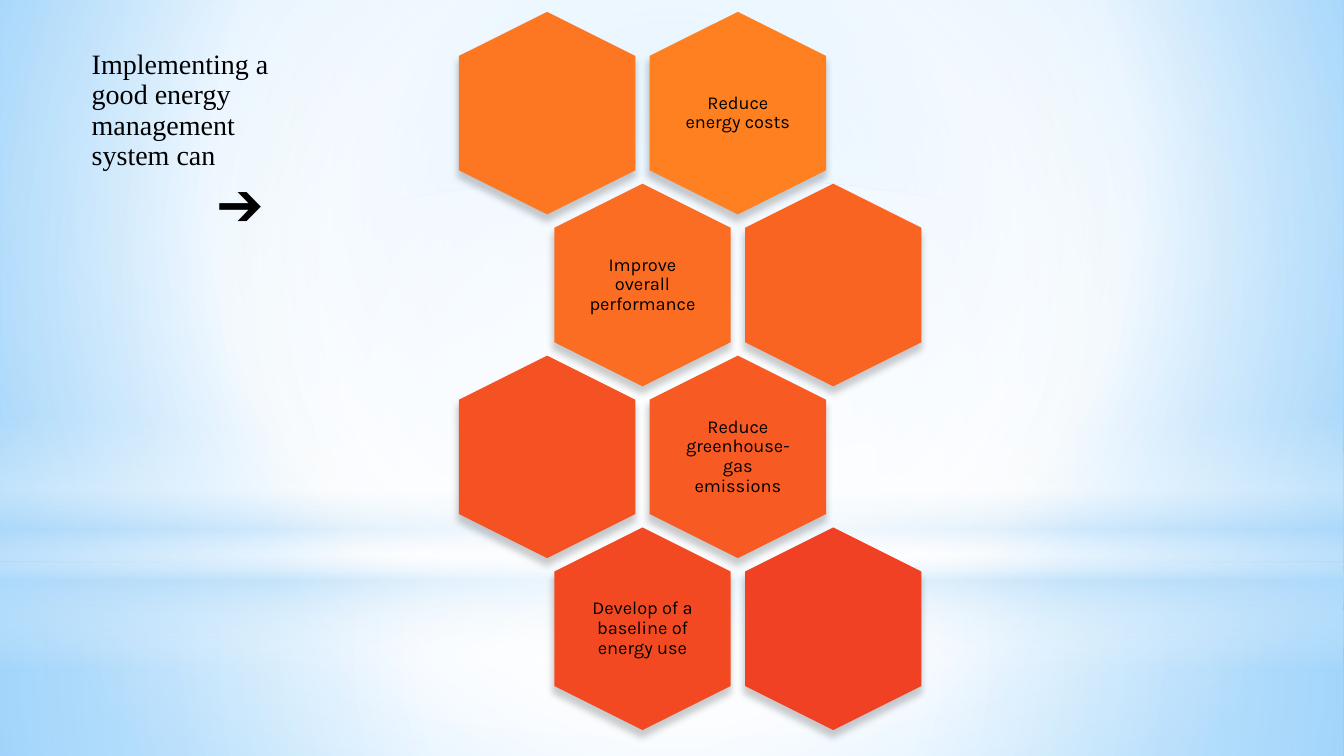
from lxml import etree
from pptx import Presentation, dml, util as u
from pptx.dml.color import RGBColor
from pptx.enum import shapes, text
from pptx.oxml import ns

WIDTH, HEIGHT = 13.33, 7.5
CENTRE = (50, 50, 50, 50)
BACKDROP = [(0, "9ED5FF", 100), (60, "FFFFFF", 100), (100, "5BB9FF", 100)]
LAYERS = [
    ("RECTANGLE", (0, 5.58, WIDTH, 1.92), CENTRE,
     [(0, "FFFFFF", 91), (37, "FFFFFF", 76), (100, "B4DCFA", 79)]),
    ("RECTANGLE", (0, 0, WIDTH, 5.58), CENTRE,
     [(0, "FFFFFF", 89), (48, "FFFFFF", 62), (100, "B4DCFA", 79)]),
    ("RECTANGLE", (0, 4.12, WIDTH, 2.5), None,
     [(0, "FFFFFF", 0), (29, "FFFFFF", 30), (45, "B4DCFA", 40),
      (55, "FFFFFF", 26), (65, "B4DCFA", 60), (100, "FFFFFF", 0)]),
    ("OVAL", (0, 1.75, WIDTH, 5.58), CENTRE,
     [(0, "FFFFFF", 100), (56, "FFFFFF", 0)]),
]
HONEYCOMB = [
    [("FD7621", ""), ("FF8021", "Reduce energy costs")],
    [("FB6D22", "Improve overall performance"), ("F96422", "")],
    [("F55223", ""), ("F75B23", "Reduce greenhouse-gas emissions")],
    [("F34923", "Develop of a baseline of energy use"), ("F14124", "")],
]
BENEFIT = {"name": "Karla", "size": u.Pt(13)}
HEADING = {"name": "Times New Roman", "size": u.Pt(20)}
ARROW = {"name": "Times New Roman", "size": u.Pt(36)}


def colour(value):
    """Turn a hex string into a colour."""
    return RGBColor.from_string(value)


def inches(box):
    """Turn a box in inches into lengths."""
    return [u.Inches(length) for length in box]


def child(parent, tag, **values):
    """Append a drawing element with its attributes."""
    return etree.SubElement(parent, ns.qn("a:" + tag),
                            {key: str(value) for key, value in values.items()})


def gradient(element, stops, focus):
    """Swap the solid fill of an element for a radial or vertical gradient."""
    solid = next(element.iter(ns.qn("a:solidFill")))
    fill = etree.Element(ns.qn("a:gradFill"), rotWithShape="1")
    stop_list = child(fill, "gsLst")
    for position, value, opacity in stops:
        stop = child(stop_list, "gs", pos=position * 1000)
        child(child(stop, "srgbClr", val=value), "alpha", val=opacity * 1000)
    if focus:
        route = child(fill, "path", path="circle")
        sides = {side: share * 1000 for side, share in zip("ltrb", focus)}
        child(route, "fillToRect", **sides)
    else:
        child(fill, "lin", ang=5400000, scaled=0)
    solid.getparent().replace(solid, fill)


def plain_shape(page, kind, box, value):
    """Add a filled shape without outline."""
    shape = page.shapes.add_shape(getattr(shapes.MSO_SHAPE, kind), *inches(box))
    shape.shadow.inherit = False
    shape.fill.solid()
    shape.fill.fore_color.rgb = colour(value)
    shape.line.fill.background()
    return shape


def write(page, box, lines, align):
    """Add a middle-anchored text box with (wording, font, indent) lines."""
    frame = page.shapes.add_textbox(*inches(box)).text_frame
    settings = {"word_wrap": True, "vertical_anchor": text.MSO_ANCHOR.MIDDLE}
    settings.update({"margin_" + side: u.Inches(0.05)
                     for side in ("left", "top", "right", "bottom")})
    for key, value in settings.items():
        setattr(frame, key, value)
    for index, (wording, font, indent) in enumerate(lines):
        para = frame.add_paragraph() if index else frame.paragraphs[0]
        para.alignment = align
        para.line_spacing = 0.9
        para.space_after = int(font["size"] * 0.35)
        if indent:
            para._p.get_or_add_pPr().set("marL", str(u.Inches(indent)))
        span = para.add_run()
        span.text = wording
        for key, value in font.items():
            setattr(span.font, key, value)
        span.font.color.rgb = colour("000000")


def backdrop(page):
    """Paint the sky gradient and its light layers."""
    page.background.fill.solid()
    page.background.fill.fore_color.rgb = colour("FFFFFF")
    gradient(page._element, BACKDROP, (20, 10, 20, 60))
    for kind, box, focus, stops in LAYERS:
        layer = plain_shape(page, kind, box, "FFFFFF")
        gradient(layer._element, stops, focus)


def hexagon(page, x, y, value, wording):
    """Add an upright hexagon centred on a point, with its wording."""
    long, short = 2.01, 1.75
    cell = plain_shape(page, "HEXAGON", (x - long / 2, y - short / 2, long, short), value)
    cell.rotation = 90
    cell.adjustments[0] = 0.25
    effects = cell._element.spPr.find(ns.qn("a:effectLst"))
    shadow = child(effects, "outerShdw", blurRad=u.Pt(5), dist=u.Pt(4), dir=5400000,
                   sx=101000, sy=101000, algn="tl", rotWithShape=0)
    child(child(shadow, "srgbClr", val="000000"), "alpha", val=20000)
    if wording:
        write(page, (x - 0.6, y - 0.69, 1.2, 1.38), [(wording, BENEFIT, 0)],
              text.PP_ALIGN.CENTER)


def honeycomb(page, box):
    """Lay out rows of hexagons, odd rows shifted by half a column."""
    left, top, width, height = box
    column, row = width / 2.5, height / len(HONEYCOMB)
    for r, cells in enumerate(HONEYCOMB):
        for c, (value, wording) in enumerate(cells):
            x = left + (c + 0.5 + r % 2 / 2) * column
            hexagon(page, x, top + (r + 0.5) * row, value, wording)


def main():
    """Build the slide and save it."""
    deck = Presentation()
    deck.slide_width, deck.slide_height = inches((WIDTH, HEIGHT))
    page = deck.slides.add_slide(deck.slide_layouts[6])
    backdrop(page)
    honeycomb(page, (4.48, 0.27, 4.73, 6.82))
    heading = "Implementing a good energy management system can"
    write(page, (0.86, 0.6, 2.06, 1.64),
          [(heading, HEADING, 0), ("➔", ARROW, 1.25)], text.PP_ALIGN.LEFT)
    deck.save("out.pptx")


if __name__ == "__main__":
    main()
